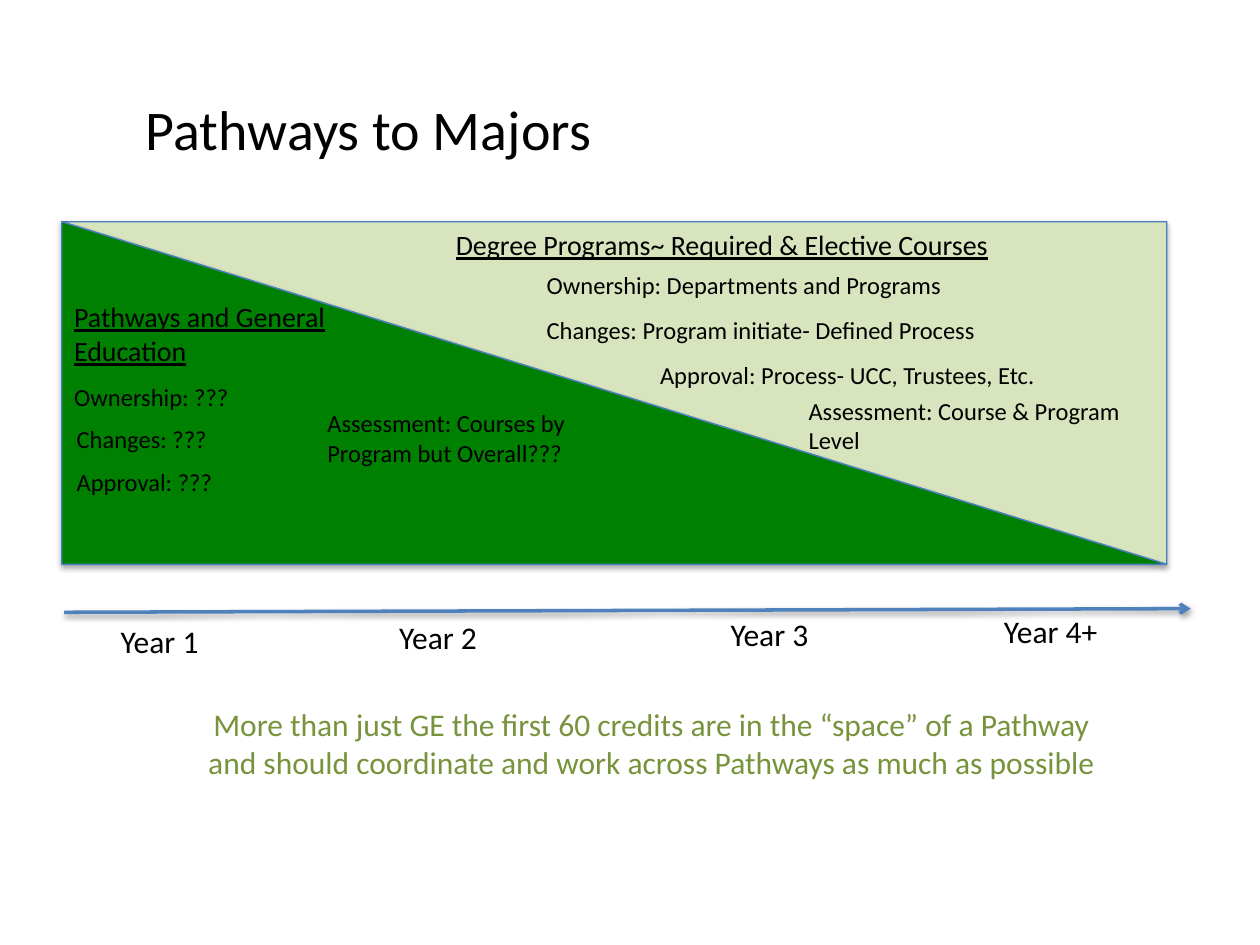
from lxml import etree
from pptx import Presentation
from pptx.dml.color import RGBColor
from pptx.enum.shapes import MSO_CONNECTOR, MSO_SHAPE
from pptx.enum.text import MSO_ANCHOR, PP_ALIGN
from pptx.oxml.ns import qn
from pptx.util import Pt

RIGHT_TRIANGLE = MSO_SHAPE.RIGHT_TRIANGLE
STRAIGHT = MSO_CONNECTOR.STRAIGHT
TOP, MIDDLE = MSO_ANCHOR.TOP, MSO_ANCHOR.MIDDLE
LEFT, CENTER = PP_ALIGN.LEFT, PP_ALIGN.CENTER

FONT = "Calibri"
BLACK, OLIVE = "000000", "77933C"

# Two triangles share one rectangle: fill, rotation
BAND = (35.3, 126.7, 631.4, 195.8)
TRIANGLES = [("D7E4BD", 180), ("008000", 0)]
TIMELINE = (36.7, 349.9, 680.4, 347.8)

TITLE = ("Pathways to Majors", 76.3, 50.4, 547.2, 46.1)
TAKEAWAY = ("More than just GE the first 60 credits are in the “space” of a Pathway "
            "and should coordinate and work across Pathways as much as possible",
            103, 380.9, 538.6, 87.1)

# Text, left, top, width, height
HEADINGS = [
    ("Pathways and General Education", 35.3, 167.8, 166.3, 46.1),
    ("Degree Programs~ Required & Elective Courses", 253.4, 126.7, 393.1, 26.6),
]
DETAILS = [
    ("Ownership: Departments and Programs", 305.3, 150.5, 298.8, 24.5),
    ("Changes: Program initiate- Defined Process", 305.3, 176.4, 361.4, 24.5),
    ("Approval: Process- UCC, Trustees, Etc.", 370.1, 202.3, 296.6, 24.5),
    ("Assessment: Course & Program Level", 455, 222.5, 211.7, 41),
    ("Ownership: ???", 35.3, 214.6, 143.3, 24.5),
    ("Changes: ???", 36.7, 239, 128.9, 24.5),
    ("Approval: ???", 36.7, 263.5, 128.9, 24.5),
    ("Assessment: Courses by Program but Overall???", 180, 229.7, 191.5, 41),
]
YEARS = [
    ("Year 1", 61.9, 352.1, 74.9, 28.8),
    ("Year 2", 221, 349.9, 64.8, 28.8),
    ("Year 3", 410.4, 347.8, 64.8, 28.8),
    ("Year 4+", 566.6, 346.3, 74.2, 28.8),
]


def rgb(value):
    return RGBColor.from_string(value)


def add_shadow(properties, opacity, distance):
    """Append a soft black shadow falling straight down; distance in points."""
    effects = properties.find(qn("a:effectLst"))
    if effects is None:
        effects = etree.SubElement(properties, qn("a:effectLst"))
    shadow = etree.SubElement(effects, qn("a:outerShdw"), blurRad=str(Pt(3.1)),
                              dist=str(Pt(distance)), dir="5400000", rotWithShape="0")
    color = etree.SubElement(shadow, qn("a:srgbClr"), val=BLACK)
    etree.SubElement(color, qn("a:alpha"), val=str(opacity * 1000))


def add_text(slide, entry, size, color=BLACK, underline=None, align=LEFT, anchor=TOP):
    text, *box = entry
    frame = slide.shapes.add_textbox(*map(Pt, box)).text_frame
    frame.word_wrap = True
    frame.vertical_anchor = anchor
    frame.text = text
    paragraph = frame.paragraphs[0]
    paragraph.alignment = align
    font = paragraph.runs[0].font
    font.name, font.size, font.underline = FONT, Pt(size), underline
    font.color.rgb = rgb(color)


def add_triangle(slide, fill, rotation):
    triangle = slide.shapes.add_shape(RIGHT_TRIANGLE, *map(Pt, BAND))
    triangle.rotation = rotation
    triangle.fill.solid()
    triangle.fill.fore_color.rgb = rgb(fill)
    triangle.line.color.rgb = rgb("4B7EBC")
    triangle.line.width = Pt(0.75)
    triangle.shadow.inherit = False
    add_shadow(triangle.element.spPr, 35, 1.8)


def add_timeline(slide):
    timeline = slide.shapes.add_connector(STRAIGHT, *map(Pt, TIMELINE))
    timeline.line.color.rgb = rgb("4F81BD")
    timeline.line.width = Pt(2)
    etree.SubElement(timeline.line._get_or_add_ln(), qn("a:tailEnd"), type="arrow")
    add_shadow(timeline.element.spPr, 38, 1.6)


def main():
    presentation = Presentation()
    presentation.slide_width, presentation.slide_height = Pt(720), Pt(540)
    slide = presentation.slides.add_slide(presentation.slide_layouts[6])

    for fill, rotation in TRIANGLES:
        add_triangle(slide, fill, rotation)
    add_timeline(slide)

    add_text(slide, TITLE, 32)
    for heading in HEADINGS:
        add_text(slide, heading, 16, underline=True)
    for detail in DETAILS:
        add_text(slide, detail, 14)
    for year in YEARS:
        add_text(slide, year, 18)
    add_text(slide, TAKEAWAY, 18, OLIVE, align=CENTER, anchor=MIDDLE)

    presentation.save("out.pptx")


if __name__ == "__main__":
    main()
